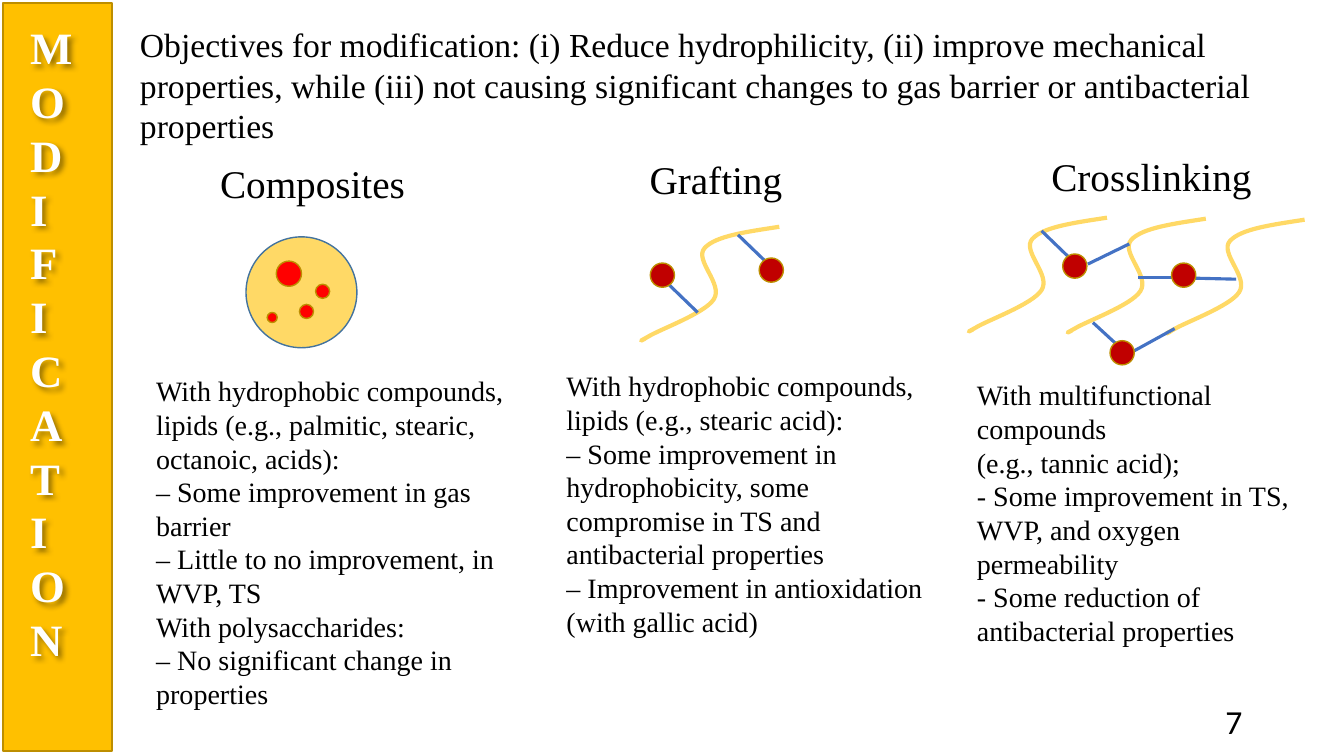
from dataclasses import dataclass
from typing import NamedTuple

from lxml import etree
from pptx import Presentation
from pptx import util as u
from pptx.dml.color import RGBColor
from pptx.enum import shapes, text
from pptx.oxml import parse_xml
from pptx.oxml.ns import nsdecls, qn

PX = 9144  # 100 px to the inch


@dataclass(frozen=True)
class Theme:
    serif: str = "Times New Roman"
    sans: str = "Calibri"
    ink: str = "000000"
    white: str = "FFFFFF"
    banner: str = "FFC000"
    gold_edge: str = "BD8E00"
    strand: str = "FFD966"
    matrix_edge: str = "43739E"
    filler: str = "FF0000"
    linker: str = "C00000"
    bond: str = "4472C4"
    banner_size: int = 32
    heading_size: int = 28
    lead_size: int = 24
    body_size: int = 20


class Box(NamedTuple):
    left: int
    top: int
    width: int
    height: int


class Bond(NamedTuple):
    x1: int
    y1: int
    x2: int
    y2: int


class Method(NamedTuple):
    heading: str
    heading_box: Box
    findings: list[str]
    findings_box: Box


THEME = Theme()
LEFT, CENTER, RIGHT = text.PP_ALIGN.LEFT, text.PP_ALIGN.CENTER, text.PP_ALIGN.RIGHT

OBJECTIVES = (
    "Objectives for modification: (i) Reduce hydrophilicity, (ii) improve mechanical "
    "properties, while (iii) not causing significant changes to gas barrier or "
    "antibacterial properties"
)

METHODS = [
    Method("Composites", Box(205, 158, 210, 54), [
        "With hydrophobic compounds, lipids (e.g., palmitic, stearic, octanoic, acids):",
        "– Some improvement in gas barrier",
        "– Little to no improvement, in WVP, TS",
        "With polysaccharides:",
        "– No significant change in properties",
    ], Box(145, 366, 365, 347)),
    Method("Grafting", Box(596, 154, 228, 66), [
        "With hydrophobic compounds, lipids (e.g., stearic acid):",
        "– Some improvement in hydrophobicity, some compromise in TS and "
        "antibacterial properties",
        "– Improvement in antioxidation (with gallic acid)",
    ], Box(552, 361, 377, 279)),
    Method("Crosslinking", Box(1022, 151, 240, 69), [
        "With multifunctional compounds",
        "(e.g., tannic acid);",
        "- Some improvement in TS, WVP, and oxygen permeability",
        "- Some reduction of antibacterial properties",
    ], Box(959, 370, 365, 279)),
]

MATRIX = Box(244, 235, 110, 110)
FILLERS = [Box(274, 259, 25, 25), Box(297, 302, 14, 14),
           Box(265, 310, 10, 10), Box(313, 282, 14, 14)]

STRANDS = [(636, 225)] + [(961 + 98 * i, 216 + i) for i in range(3)]
STRAND_WIDTH, STRAND_HEIGHT = 137, 113
STRAND_CURVES = [
    ((105, 5), (74, 9), (63, 21)),
    ((52, 33), (82, 57), (72, 72)),
    ((63, 86), (18, 102), (7, 109)),
    ((-4, 115), (0, 113), (4, 111)),
]

BONDS = [
    Bond(663, 282, 692, 310), Bond(732, 233, 761, 261),
    Bond(1033, 229, 1062, 257), Bond(1079, 262, 1120, 242),
    Bond(1084, 320, 1109, 343), Bond(1125, 348, 1165, 326),
    Bond(1129, 275, 1163, 275), Bond(1185, 276, 1226, 277),
]
LINKER_SIZE = 24
LINKERS = [(645, 261), (753, 256), (1054, 252), (1101, 338), (1162, 261)]


def rgb(code: str) -> RGBColor:
    return RGBColor.from_string(code)


def add_text(slide, box: Box, paragraphs: list[str], *, size: int,
             color: str = THEME.ink, font: str = THEME.serif, bold: bool = False,
             align=LEFT, anchor=text.MSO_ANCHOR.TOP, spacing: float | None = None,
             grow: bool = False, wrap: bool = True):
    frame_shape = slide.shapes.add_textbox(*(v * PX for v in box))
    frame = frame_shape.text_frame
    frame.word_wrap = wrap
    frame.vertical_anchor = anchor
    if grow:
        frame.auto_size = text.MSO_AUTO_SIZE.SHAPE_TO_FIT_TEXT
    for i, wording in enumerate(paragraphs):
        paragraph = frame.add_paragraph() if i else frame.paragraphs[0]
        paragraph.alignment = align
        paragraph.line_spacing = spacing
        run = paragraph.add_run()
        run.text = wording
        run.font.name, run.font.size, run.font.bold = font, u.Pt(size), bold
        run.font.color.rgb = rgb(color)
    return frame_shape


def add_solid(slide, kind, box: Box, fill: str, edge: str = THEME.gold_edge) -> None:
    solid = slide.shapes.add_shape(kind, *(v * PX for v in box))
    solid.shadow.inherit = False
    solid.fill.solid()
    solid.fill.fore_color.rgb = rgb(fill)
    solid.line.color.rgb = rgb(edge)
    solid.line.width = u.Pt(1)


def add_strand(slide, left: int, top: int) -> None:
    """Draw one polymer chain, its outline made of cubic curves."""
    builder = slide.shapes.build_freeform(left + STRAND_WIDTH, top, scale=PX)
    builder.add_line_segments([(left, top + STRAND_HEIGHT)], close=False)
    strand = builder.convert_to_shape()
    outline = next(strand._element.iter(qn("a:path")))
    outline.remove(outline.find(qn("a:lnTo")))
    for curve in STRAND_CURVES:
        cubic = etree.SubElement(outline, qn("a:cubicBezTo"))
        for x, y in curve:
            etree.SubElement(cubic, qn("a:pt"), x=str(x), y=str(y))
    strand.shadow.inherit = False
    strand.fill.background()
    strand.line.color.rgb = rgb(THEME.strand)
    strand.line.width = u.Pt(3)


def add_bond(slide, bond: Bond) -> None:
    line = slide.shapes.add_connector(
        shapes.MSO_CONNECTOR.STRAIGHT, *(v * PX for v in bond))
    line.line.color.rgb = rgb(THEME.bond)
    line.line.width = u.Pt(2.25)
    etree.SubElement(line._element.spPr, qn("a:effectLst"))


def add_banner(slide) -> None:
    add_solid(slide, shapes.MSO_SHAPE.RECTANGLE, Box(3, 3, 108, 742), THEME.banner)
    title = add_text(slide, Box(20, 15, 78, 652), ["MODIFICATION"], bold=True,
                     size=THEME.banner_size, color=THEME.white, grow=True, wrap=False)
    title.text_frame._txBody.bodyPr.set("vert", "wordArtVert")
    title._element.spPr.append(parse_xml(
        f'<a:effectLst {nsdecls("a")}><a:outerShdw blurRad="50800" dist="38100" '
        'dir="2700000"><a:srgbClr val="000000"><a:alpha val="40000"/></a:srgbClr>'
        '</a:outerShdw></a:effectLst>'))


def main() -> None:
    deck = Presentation()
    deck.slide_width, deck.slide_height = 1333 * PX, 750 * PX
    slide = deck.slides.add_slide(deck.slide_layouts[6])
    oval = shapes.MSO_SHAPE.OVAL

    for method in METHODS:
        add_text(slide, method.heading_box, [method.heading], size=THEME.heading_size,
                 align=CENTER, spacing=0.9)
    add_banner(slide)

    add_solid(slide, oval, MATRIX, THEME.strand, THEME.matrix_edge)
    for filler in FILLERS:
        add_solid(slide, oval, filler, THEME.filler)
    for left, top in STRANDS:
        add_strand(slide, left, top)
    for bond in BONDS:
        add_bond(slide, bond)
    for left, top in LINKERS:
        add_solid(slide, oval, Box(left, top, LINKER_SIZE, LINKER_SIZE), THEME.linker)

    for method in METHODS:
        add_text(slide, method.findings_box, method.findings, size=THEME.body_size, grow=True)
    add_text(slide, Box(129, 19, 1204, 131), [OBJECTIVES], size=THEME.lead_size, grow=True)
    add_text(slide, Box(942, 695, 300, 40), ["7"], size=THEME.lead_size, font=THEME.sans,
             align=RIGHT, anchor=text.MSO_ANCHOR.MIDDLE)
    deck.save("out.pptx")


if __name__ == "__main__":
    main()
